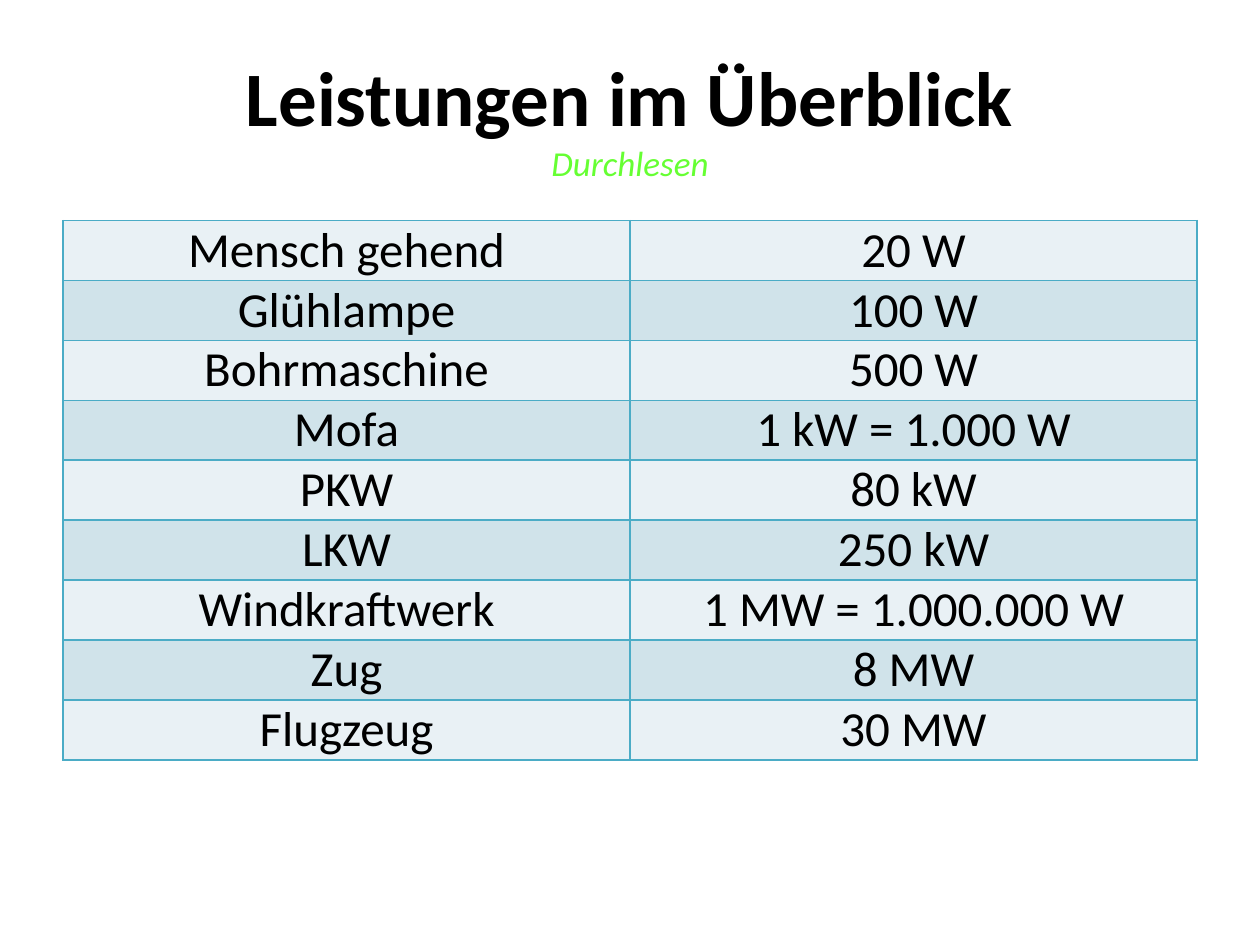
from typing import NamedTuple

from lxml.etree import SubElement
from pptx import Presentation
from pptx.dml.color import RGBColor
from pptx.enum.text import MSO_ANCHOR, MSO_AUTO_SIZE, PP_ALIGN
from pptx.oxml.ns import qn
from pptx.util import Inches, Pt

FONT = "Calibri"
BLACK, GREEN, BORDER = "000000", "66FF33", "4BACC6"
BANDS = ("E9F1F5", "D0E3EA")


class Power(NamedTuple):
    source: str
    value: str


POWERS = [
    Power("Mensch gehend", "20 W"),
    Power("Glühlampe", "100 W"),
    Power("Bohrmaschine", "500 W"),
    Power("Mofa", "1 kW = 1.000 W"),
    Power("PKW", "80 kW"),
    Power("LKW", "250 kW"),
    Power("Windkraftwerk", "1 MW = 1.000.000 W"),
    Power("Zug", "8 MW"),
    Power("Flugzeug", "30 MW"),
]


def rgb(value: str) -> RGBColor:
    return RGBColor.from_string(value)


def add_run(p, text: str, size: int, color: str = BLACK,
            bold: bool = False, italic: bool = False) -> None:
    r = p.add_run()
    r.text = text
    r.font.name, r.font.size = FONT, Pt(size)
    r.font.bold, r.font.italic = bold, italic
    r.font.color.rgb = rgb(color)


def add_borders(cell, color: str, width: float) -> None:
    """Draw all four cell sides; lines must precede the fill in tcPr."""
    tc_pr = cell._tc.get_or_add_tcPr()
    for i, side in enumerate(("lnL", "lnR", "lnT", "lnB")):
        ln = SubElement(tc_pr, qn(f"a:{side}"), w=str(Pt(width)))
        fill = SubElement(ln, qn("a:solidFill"))
        SubElement(fill, qn("a:srgbClr"), val=color)
        tc_pr.insert(i, ln)


def fill_cell(cell, text: str, band: str) -> None:
    cell.margin_left = cell.margin_right = Inches(0.07)
    cell.margin_top = cell.margin_bottom = 0
    add_borders(cell, BORDER, 1)
    cell.fill.solid()
    cell.fill.fore_color.rgb = rgb(band)
    p = cell.text_frame.paragraphs[0]
    p.alignment = PP_ALIGN.CENTER
    add_run(p, text, 28)


def add_title(s) -> None:
    sp = s.shapes.title
    sp.left, sp.top = Inches(0.5), Inches(0.3)
    sp.width, sp.height = Inches(9), Inches(1.25)
    tf = sp.text_frame
    tf.word_wrap = True
    tf.auto_size = MSO_AUTO_SIZE.NONE
    tf.vertical_anchor = MSO_ANCHOR.MIDDLE
    p = tf.paragraphs[0]
    p.alignment = PP_ALIGN.CENTER
    add_run(p, "Leistungen im Überblick", 44, bold=True)
    p.add_line_break()
    add_run(p, "Durchlesen", 20, GREEN, italic=True)


def add_power_table(s, powers: list[Power]) -> None:
    table = s.shapes.add_table(len(powers), 2, Inches(0.5), Inches(1.75),
                               Inches(9), Inches(4.2)).table
    table.first_row = False
    for i, power in enumerate(powers):
        for j, text in enumerate(power):
            fill_cell(table.cell(i, j), text, BANDS[i % 2])


def main() -> None:
    prs = Presentation()
    prs.slide_width, prs.slide_height = Inches(10), Inches(7.5)
    s = prs.slides.add_slide(prs.slide_layouts[5])  # title only
    add_title(s)
    add_power_table(s, POWERS)
    prs.save("out.pptx")


if __name__ == "__main__":
    main()
